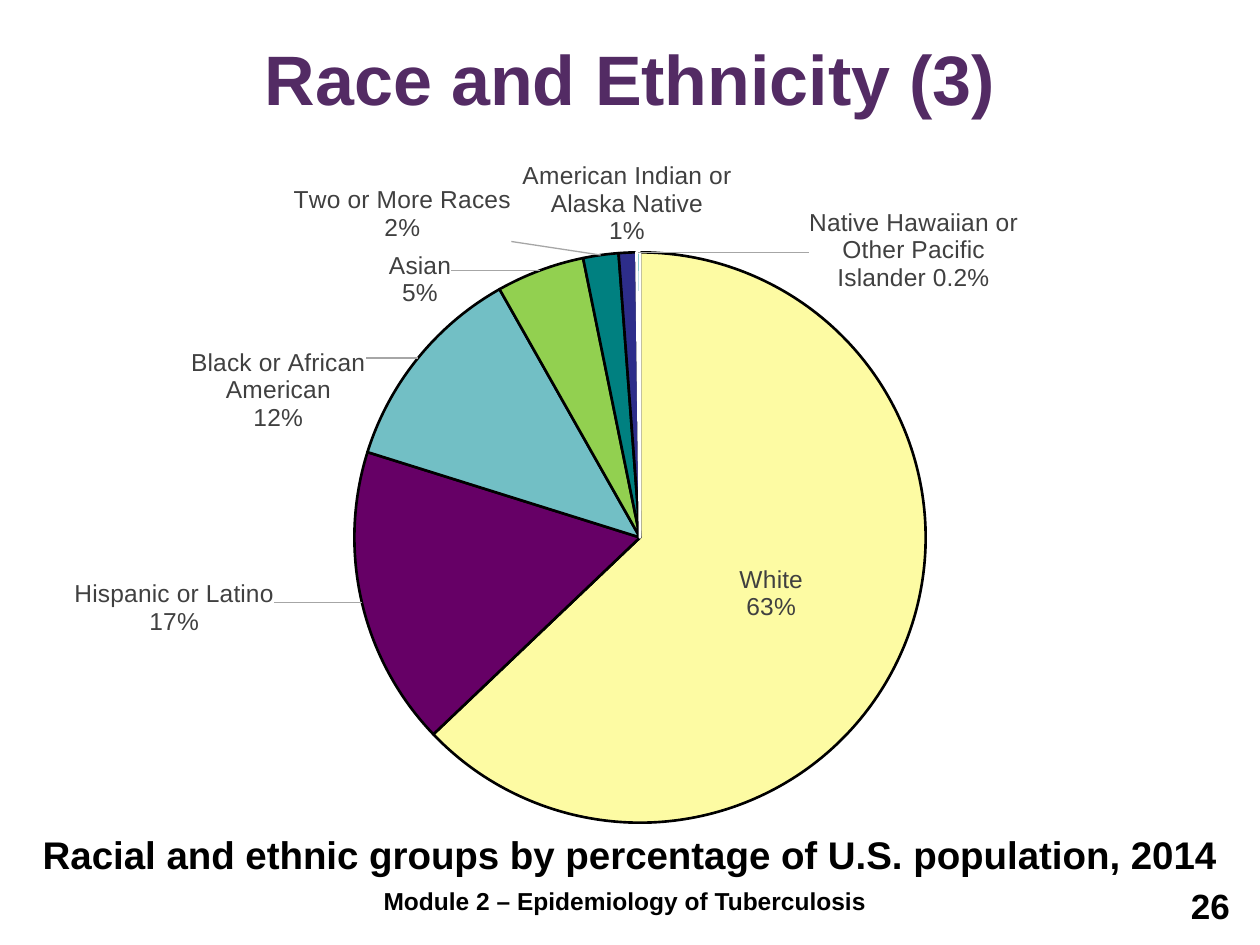
import pptx
import pptx.util
import pptx.chart.data
import pptx.dml.color
import pptx.enum.chart
import pptx.enum.text
import pptx.oxml
import pptx.oxml.ns

Inches, Pt = pptx.util.Inches, pptx.util.Pt
ALIGN = pptx.enum.text.PP_ALIGN
ANCHOR = pptx.enum.text.MSO_ANCHOR
SPOT = pptx.enum.chart.XL_LABEL_POSITION
NS = pptx.oxml.ns.nsdecls("c", "a")

# text, box, size, colour, alignment, anchor
TEXTS = [
    ("Module 2 – Epidemiology of Tuberculosis", (1.75, 6.98, 6.42, 0.52),
     14, "000000", ALIGN.CENTER, ANCHOR.TOP),
    ("26", (7.53, 6.97, 2.33, 0.52), 20, "000000", ALIGN.RIGHT, ANCHOR.TOP),
    ("Race and Ethnicity (3)", (0, 0, 10, 1),
     40, "532B64", ALIGN.CENTER, ANCHOR.BOTTOM),
    ("Racial and ethnic groups by percentage of U.S. population, 2014",
     (0, 6.54, 10, 0.47), 22, "000000", ALIGN.CENTER, ANCHOR.BOTTOM),
]

# share, fill, edge, label lines, label shift in inches
SLICES = [
    (0.63, "FDFBA3", "000000", ["White", "63%"], None),
    (0.17, "660066", "000000", ["Hispanic or Latino", "17%"], (-0.64, -0.19)),
    (0.12, "72BFC5", "000000", ["Black or African American", "12%"],
     (-0.37, 0.62)),
    (0.05, "92D050", "000000", ["Asian", "5%"], (-0.68, 0.35)),
    (0.02, "008080", "000000", ["Two or More Races", "2%"], (-0.7, -0.05)),
    (0.01, "2D2D8A", "000000", ["American Indian or Alaska Native", "1%"],
     None),
    (0.002, "48A8B0", "FFFFFF",
     ["Native Hawaiian or Other Pacific Islander 0.2%"], (2.19, 0.37)),
]
CHART = (0.58, 1.01, 9, 5.53)
PLOT = (0.248, 0.18, 0.504, 0.82)


def tint(code):
    return pptx.dml.color.RGBColor.from_string(code)


def style(font, size, code, bold=False):
    font.name, font.size, font.bold = "Arial", Pt(size), bold
    font.color.rgb = tint(code)


def layout(pairs, inner=False):
    """Manual chart layout from (tag, value) pairs."""
    body = "".join(f'<c:{tag} val="{val}"/>' for tag, val in pairs)
    target = '<c:layoutTarget val="inner"/>' if inner else ""
    return pptx.oxml.parse_xml(
        f"<c:layout {NS}><c:manualLayout>{target}{body}"
        "</c:manualLayout></c:layout>")


def write(slide, text, box, size, code, align, anchor):
    frame = slide.shapes.add_textbox(*map(Inches, box)).text_frame
    frame.word_wrap = True
    frame.vertical_anchor = anchor
    para = frame.paragraphs[0]
    para.alignment = align
    run = para.add_run()
    run.text = text
    style(run.font, size, code, True)


def label(point, lines, shift):
    tag = point.data_label
    frame = tag.text_frame
    for i, line in enumerate(lines):
        para = frame.paragraphs[0] if i == 0 else frame.add_paragraph()
        run = para.add_run()
        run.text = line
        style(run.font, 14, "404040")
    tag.position = SPOT.CENTER if lines[0] == "White" else SPOT.OUTSIDE_END
    if shift:
        x, y = (round(d / full, 3) for d, full in zip(shift, CHART[2:]))
        node = frame._txBody.getparent().getparent()
        for old in node.findall(pptx.oxml.ns.qn("c:layout")):
            node.remove(old)
        node.insert(1, layout([("x", x), ("y", y)]))


def draw_pie(slide):
    data = pptx.chart.data.CategoryChartData(number_format="0%")
    data.categories = [str(i + 1) for i in range(len(SLICES))]
    data.add_series("Series 1", [part[0] for part in SLICES])
    chart = slide.shapes.add_chart(
        pptx.enum.chart.XL_CHART_TYPE.PIE, *map(Inches, CHART), data).chart
    chart.has_legend = chart.has_title = False
    style(chart.font, 10, "000000")

    area = chart._chartSpace.chart.plotArea
    for old in area.findall(pptx.oxml.ns.qn("c:layout")):
        area.remove(old)
    modes = [("xMode", "edge"), ("yMode", "edge")]
    area.insert(0, layout(modes + list(zip("xywh", PLOT)), True))

    plot = chart.plots[0]
    plot.vary_by_categories = True
    series = plot.series[0]
    tags = series.data_labels
    tags.show_value = True
    tags.number_format, tags.number_format_is_linked = "0%", False
    style(tags.font, 14, "404040")
    for i, (_, fill, edge, lines, shift) in enumerate(SLICES):
        point = series.points[i]
        point.format.fill.solid()
        point.format.fill.fore_color.rgb = tint(fill)
        point.format.line.color.rgb = tint(edge)
        point.format.line.width = Pt(1.5)
        label(point, lines, shift)
    tags._element.append(pptx.oxml.parse_xml(
        f'<c:leaderLines {NS}><c:spPr><a:ln w="9525"><a:solidFill>'
        '<a:srgbClr val="A6A6A6"/></a:solidFill></a:ln></c:spPr>'
        "</c:leaderLines>"))


def main():
    deck = pptx.Presentation()
    deck.slide_width, deck.slide_height = Inches(10), Inches(7.5)
    slide = deck.slides.add_slide(deck.slide_layouts[6])
    draw_pie(slide)
    for item in TEXTS:
        write(slide, *item)
    deck.save("out.pptx")


if __name__ == "__main__":
    main()
